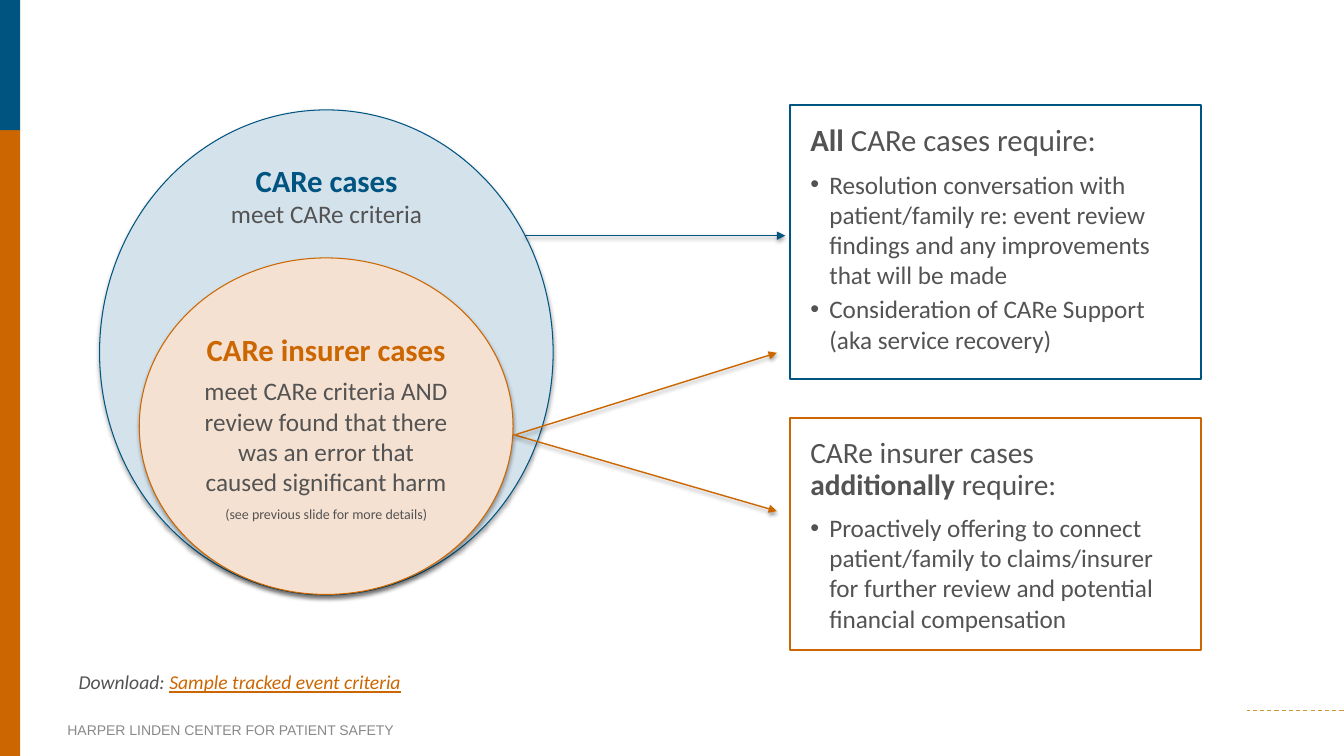
from lxml.etree import SubElement
from pptx import Presentation
from pptx.dml.color import RGBColor
from pptx.enum.dml import MSO_LINE
from pptx.enum.shapes import MSO_CONNECTOR, MSO_SHAPE
from pptx.enum.text import MSO_ANCHOR, MSO_AUTO_SIZE, PP_ALIGN
from pptx.oxml.ns import qn
from pptx.util import Cm, Pt

COLORS = {
    "blue": "005480", "orange": "CC6600", "gold": "CC9933",
    "pale_blue": "D4E2EC", "pale_orange": "F5E1D1", "white": "FFFFFF",
    "text": "535353", "footer": "898989", "shadow": "000000",
}

SLIDE_SIZE = (33.87, 19.05)
SIDE_BARS = [("orange", (0, 3.28, 0.51, 15.77)), ("blue", (0, 0, 0.51, 3.28))]
FOOTER_RULE = (33.86, 17.91, 31.42, 17.91)

REQUIREMENTS = [
    {
        "at": (19.91, 2.64, 10.36, 6.91), "color": "blue", "size": 22,
        "heading": [("All ", {"bold": True}), ("CARe cases require:", {})],
        "items": [
            "Resolution conversation with patient/family re: event review "
            "findings and any improvements that will be made",
            "Consideration of CARe Support (aka service recovery)",
        ],
    },
    {
        "at": (19.91, 10.54, 10.36, 5.84), "color": "orange", "size": 21,
        "heading": [("CARe insurer cases ", {}), ("additionally", {"bold": True}),
                    (" require:", {})],
        "items": [
            "Proactively offering to connect patient/family to claims/insurer "
            "for further review and potential financial compensation",
        ],
    },
]

CIRCLES = [
    ("pale_blue", "blue", (2.51, 2.77, 11.43, 12.22), []),
    ("pale_orange", "orange", (3.51, 6.5, 9.42, 8.48), [
        ("CARe insurer cases", {"size": 22, "color": "orange", "bold": True}, 6),
        ("meet CARe criteria AND review found that there was an error that "
         "caused significant harm", {"size": 18}, 6),
        ("(see previous slide for more details)", {"size": 10}, 0),
    ]),
]

CARE_LABEL_AT = (4.42, 3.94, 7.62, 2.13)
CARE_LABEL = [
    ("CARe cases", {"size": 22, "color": "blue", "bold": True}, 0),
    ("meet CARe criteria", {"size": 18}, 0),
]

DOWNLOAD_AT = (1.73, 16.76, 15.85, 0.86)
DOWNLOAD = [
    ("Download: ", {"size": 14, "italic": True}),
    ("Sample tracked event criteria",
     {"size": 14, "italic": True, "color": "orange", "underline": True}),
]

FOOTER_AT = (1.7, 17.83, 10.31, 1.14)
FOOTER = ("HARPER LINDEN CENTER FOR PATIENT SAFETY",
          {"size": 10, "color": "footer", "font": "Arial"})

ARROWS = [
    ("blue", (13.23, 5.94, 19.79, 5.94)),
    ("orange", (12.93, 10.95, 19.58, 12.88)),
    ("orange", (13, 10.95, 19.58, 8.89)),
]


def rgb(name):
    return RGBColor.from_string(COLORS[name])


def cm(lengths):
    return [Cm(length) for length in lengths]


def add_run(paragraph, text, size=18, color="text", font="Calibri",
            bold=False, italic=False, underline=False):
    run = paragraph.add_run()
    run.text = text
    run.font.size = Pt(size)
    run.font.name = font
    run.font.color.rgb = rgb(color)
    run.font.bold = bold
    run.font.italic = italic
    run.font.underline = underline


def next_paragraph(frame):
    first = frame.paragraphs[0]
    return frame.add_paragraph() if first.runs else first


def add_centered(frame, lines):
    frame.word_wrap = True
    for text, style, after in lines:
        paragraph = next_paragraph(frame)
        paragraph.alignment = PP_ALIGN.CENTER
        paragraph.space_after = Pt(after)
        add_run(paragraph, text, **style)


def set_margins(frame, margin):
    frame.margin_left = frame.margin_right = Cm(margin)
    frame.margin_top = frame.margin_bottom = Cm(margin)


def set_bullet(paragraph, char=None):
    properties = paragraph._p.get_or_add_pPr()
    indent = Cm(0.48) if char else 0
    properties.set("marL", str(indent))
    properties.set("indent", str(-indent))
    if char:
        SubElement(properties, qn("a:buChar"), char=char)
    else:
        SubElement(properties, qn("a:buNone"))


def add_effects(shape, alpha=0):
    effects = SubElement(shape._element.spPr, qn("a:effectLst"))
    if alpha:
        shadow = SubElement(effects, qn("a:outerShdw"), blurRad=str(Pt(3.1)),
                            dist=str(Pt(1.8)), dir="5400000", rotWithShape="0")
        color = SubElement(shadow, qn("a:srgbClr"), val=COLORS["shadow"])
        SubElement(color, qn("a:alpha"), val=str(alpha * 1000))


def paint(shape, fill, line=None, width=0.75):
    shape.fill.solid()
    shape.fill.fore_color.rgb = rgb(fill)
    if line:
        shape.line.color.rgb = rgb(line)
        shape.line.width = Pt(width)
    else:
        shape.line.fill.background()


def add_line(slide, color, ends, width):
    line = slide.shapes.add_connector(MSO_CONNECTOR.STRAIGHT, *cm(ends))
    line.line.color.rgb = rgb(color)
    line.line.width = Pt(width)
    return line


def fill_requirement(box, content):
    box.left, box.top, box.width, box.height = cm(content["at"])
    paint(box, "white", content["color"], 1.5)
    frame = box.text_frame
    frame.word_wrap = True
    frame.auto_size = MSO_AUTO_SIZE.NONE
    frame.vertical_anchor = MSO_ANCHOR.TOP
    set_margins(frame, 0.51)
    heading = next_paragraph(frame)
    heading.line_spacing = 0.9
    heading.space_before = Pt(0)
    heading.space_after = Pt(content["size"] * 0.35)
    set_bullet(heading)
    for text, style in content["heading"]:
        add_run(heading, text, size=content["size"], **style)
    for text in content["items"]:
        item = next_paragraph(frame)
        item.space_before = Pt(0)
        item.space_after = Pt(2.7)
        set_bullet(item, "•")
        add_run(item, text)


def main():
    deck = Presentation()
    deck.slide_width, deck.slide_height = cm(SLIDE_SIZE)
    slide = deck.slides.add_slide(deck.slide_layouts[3])
    title, *boxes = slide.placeholders
    title._element.getparent().remove(title._element)
    for box, content in zip(boxes, REQUIREMENTS):
        fill_requirement(box, content)

    for color, at in SIDE_BARS:
        bar = slide.shapes.add_shape(MSO_SHAPE.RECTANGLE, *cm(at))
        paint(bar, color)
        bar.shadow.inherit = False

    rule = add_line(slide, "gold", FOOTER_RULE, 0.75)
    rule.line.dash_style = MSO_LINE.DASH
    add_effects(rule)

    footer = slide.shapes.add_textbox(*cm(FOOTER_AT)).text_frame
    footer.word_wrap = True
    footer.vertical_anchor = MSO_ANCHOR.MIDDLE
    set_margins(footer, 0)
    footer_text, footer_style = FOOTER
    add_run(footer.paragraphs[0], footer_text, **footer_style)

    for fill, outline, at, lines in CIRCLES:
        circle = slide.shapes.add_shape(MSO_SHAPE.OVAL, *cm(at))
        paint(circle, fill, outline)
        add_effects(circle, 35)
        circle.text_frame.vertical_anchor = MSO_ANCHOR.MIDDLE
        add_centered(circle.text_frame, lines)

    care_label = slide.shapes.add_textbox(*cm(CARE_LABEL_AT))
    add_centered(care_label.text_frame, CARE_LABEL)

    download = slide.shapes.add_textbox(*cm(DOWNLOAD_AT)).text_frame
    download.word_wrap = True
    for text, style in DOWNLOAD:
        add_run(download.paragraphs[0], text, **style)

    for color, ends in ARROWS:
        arrow = add_line(slide, color, ends, 1)
        SubElement(arrow._element.spPr.find(qn("a:ln")), qn("a:tailEnd"), type="triangle")
        add_effects(arrow, 38)

    deck.save("out.pptx")


if __name__ == "__main__":
    main()
